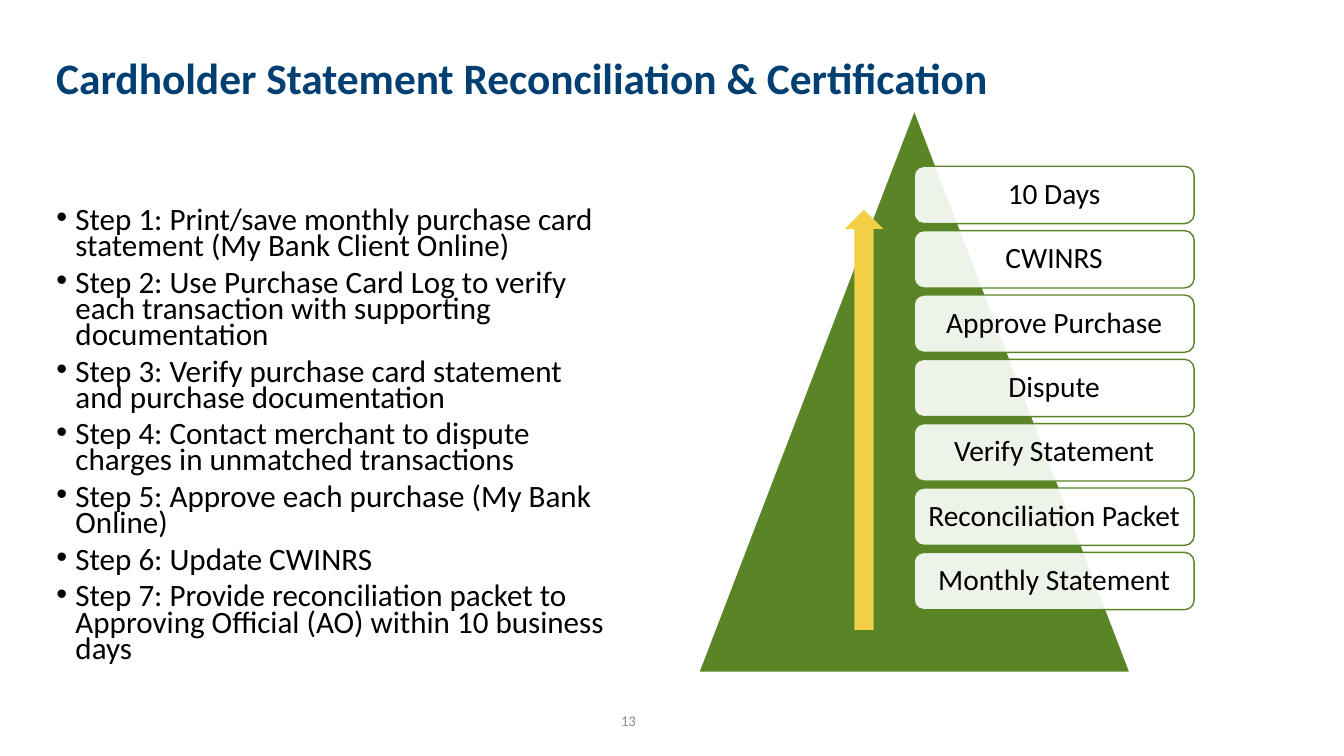
from lxml.etree import SubElement
from pptx import Presentation
from pptx.dml.color import RGBColor
from pptx.enum.shapes import MSO_SHAPE
from pptx.enum.text import MSO_ANCHOR, PP_ALIGN
from pptx.oxml.ns import qn
from pptx.util import Pt

TITLE = "Cardholder Statement Reconciliation & Certification"
STEPS = [
    "Step 1: Print/save monthly purchase card statement (My Bank Client Online)",
    "Step 2: Use Purchase Card Log to verify each transaction with supporting documentation",
    "Step 3: Verify purchase card statement and purchase documentation",
    "Step 4: Contact merchant to dispute charges in unmatched transactions",
    "Step 5: Approve each purchase (My Bank Online)",
    "Step 6: Update CWINRS",
    "Step 7: Provide reconciliation packet to Approving Official (AO) within 10 business days",
]
PYRAMID_LABELS = [
    "10 Days",
    "CWINRS",
    "Approve Purchase",
    "Dispute",
    "Verify Statement",
    "Reconciliation Packet",
    "Monthly Statement",
]
PAGE_NUMBER = "13"

FONT = "Calibri"
NAVY = RGBColor(0x00, 0x3F, 0x72)
GREEN = RGBColor(0x59, 0x85, 0x27)
YELLOW = RGBColor(0xF3, 0xCF, 0x45)
GRAY = RGBColor(0x8C, 0x8C, 0x8C)
BLACK = RGBColor(0, 0, 0)
WHITE = RGBColor(255, 255, 255)

# left, top, width, height in points
TITLE_BOX = (33.1, 26.6, 765.4, 61.2)
STEPS_BOX = (33.1, 114.5, 409.7, 375.1)
NUMBER_BOX = (421.9, 500.4, 54, 28.8)
TRIANGLE_BOX = (499, 78.5, 308.2, 401.8)
ARROW_BOX = (603.4, 149.8, 27.4, 300.2)
LABEL_LEFT, LABEL_TOP, LABEL_WIDTH, LABEL_HEIGHT = 653, 118.8, 200, 41
LABEL_PITCH = 45.96
STEP_INDENT = 13.7


def format_runs(paragraph, size, color, bold=False):
    for run in paragraph.runs:
        run.font.name = FONT
        run.font.size = Pt(size)
        run.font.color.rgb = color
        run.font.bold = bold


def add_text(slide, box, lines, anchor=MSO_ANCHOR.MIDDLE):
    """Add a wrapping text box with one paragraph per line; return its frame."""
    frame = slide.shapes.add_textbox(*map(Pt, box)).text_frame
    frame.word_wrap = True
    frame.vertical_anchor = anchor
    frame.text = "\n".join(lines)
    return frame


def add_filled(slide, kind, box, fill, line=None):
    shape = slide.shapes.add_shape(kind, *map(Pt, box))
    shape.shadow.inherit = False
    shape.fill.solid()
    shape.fill.fore_color.rgb = fill
    if line is None:
        shape.line.fill.background()
    else:
        shape.line.color.rgb = line
        shape.line.width = Pt(1)
    return shape


def set_opacity(shape, percent):
    color = shape.fill._xPr.find(qn("a:solidFill"))[0]
    SubElement(color, qn("a:alpha")).set("val", str(percent * 1000))


def add_bullet(paragraph, indent):
    properties = paragraph._p.get_or_add_pPr()
    properties.set("marL", str(Pt(indent)))
    properties.set("indent", str(-Pt(indent)))
    SubElement(properties, qn("a:buFont")).set("typeface", "Arial")
    SubElement(properties, qn("a:buChar")).set("char", "•")


def add_pyramid(slide):
    add_filled(slide, MSO_SHAPE.ISOSCELES_TRIANGLE, TRIANGLE_BOX, GREEN, WHITE)
    for index, text in enumerate(PYRAMID_LABELS):
        box = (LABEL_LEFT, LABEL_TOP + index * LABEL_PITCH, LABEL_WIDTH, LABEL_HEIGHT)
        label = add_filled(slide, MSO_SHAPE.ROUNDED_RECTANGLE, box, WHITE, GREEN)
        set_opacity(label, 90)
        frame = label.text_frame
        frame.word_wrap = True
        frame.vertical_anchor = MSO_ANCHOR.MIDDLE
        frame.margin_left = frame.margin_right = Pt(4)
        frame.text = text
        paragraph = frame.paragraphs[0]
        paragraph.alignment = PP_ALIGN.CENTER
        paragraph.line_spacing = 0.9
        format_runs(paragraph, 21, BLACK)


def add_steps(slide):
    frame = add_text(slide, STEPS_BOX, STEPS, MSO_ANCHOR.BOTTOM)
    frame.margin_bottom = Pt(15)
    for index, paragraph in enumerate(frame.paragraphs):
        add_bullet(paragraph, STEP_INDENT)
        paragraph.line_spacing = 0.7
        if index:
            paragraph.space_before = Pt(7.5)
        format_runs(paragraph, 22.2, BLACK)


def main():
    presentation = Presentation()
    presentation.slide_width, presentation.slide_height = Pt(960), Pt(540)
    slide = presentation.slides.add_slide(presentation.slide_layouts[6])

    add_pyramid(slide)
    title = add_text(slide, TITLE_BOX, [TITLE]).paragraphs[0]
    title.line_spacing = 0.9
    format_runs(title, 31, NAVY, bold=True)
    add_steps(slide)
    add_filled(slide, MSO_SHAPE.UP_ARROW, ARROW_BOX, YELLOW)
    number = add_text(slide, NUMBER_BOX, [PAGE_NUMBER]).paragraphs[0]
    number.alignment = PP_ALIGN.CENTER
    format_runs(number, 10.5, GRAY)

    presentation.save("out.pptx")


if __name__ == "__main__":
    main()
